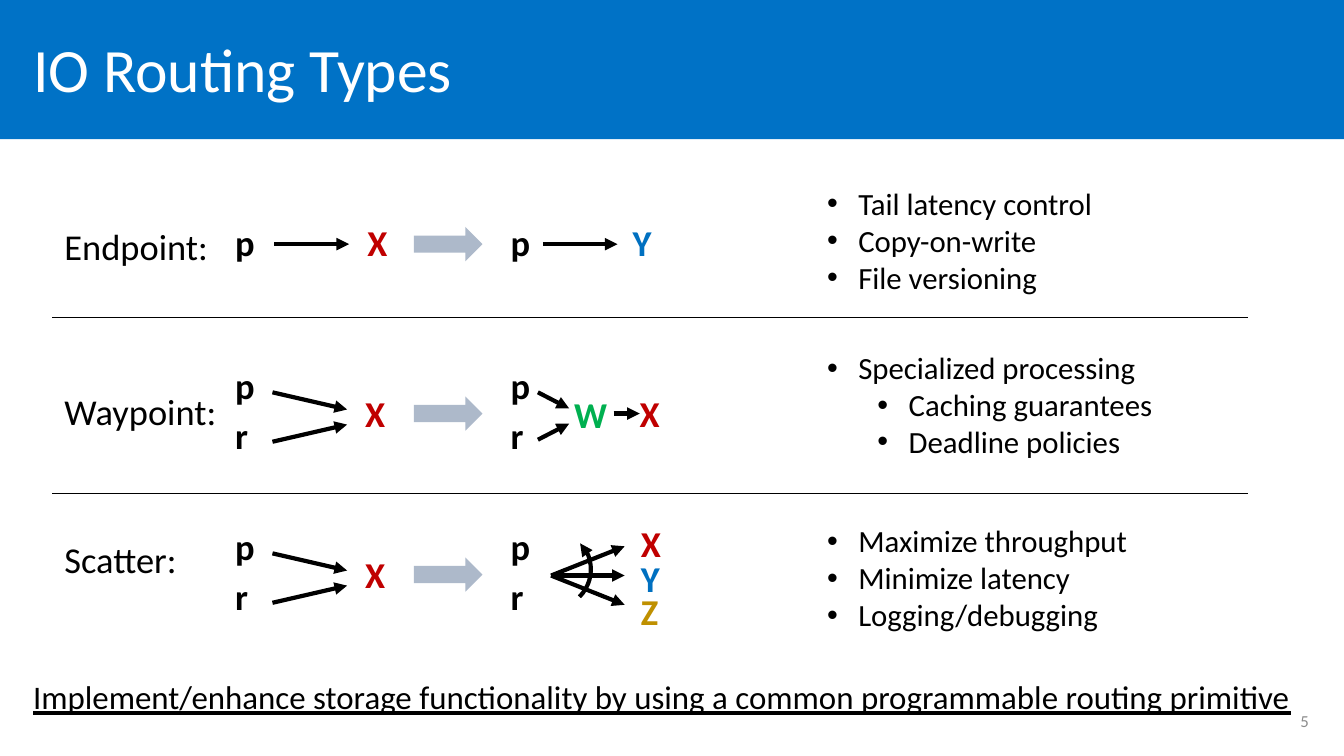
from lxml import etree
from pptx import Presentation
from pptx.dml.color import RGBColor
from pptx.enum.shapes import MSO_CONNECTOR, MSO_SHAPE
from pptx.enum.text import MSO_ANCHOR, PP_ALIGN
from pptx.oxml.ns import qn
from pptx.util import Inches, Pt

RECT, BLOCK, ARC = MSO_SHAPE.RECTANGLE, MSO_SHAPE.RIGHT_ARROW, MSO_SHAPE.ARC
STRAIGHT = MSO_CONNECTOR.STRAIGHT
TOP, MIDDLE = MSO_ANCHOR.TOP, MSO_ANCHOR.MIDDLE
LEFT, RIGHT = PP_ALIGN.LEFT, PP_ALIGN.RIGHT

W, H = 13.33, 7.5
FONT = "Calibri"
BLACK, WHITE, GREY = "000000", "FFFFFF", "8C8C8C"
BAND, STEEL = "0072C6", "ADB9CA"
# Letter: colour and box width
GLYPHS = {"p": (BLACK, 0.2), "r": (BLACK, 0.13), "X": ("C00000", 0.2),
          "Y": ("0070C0", 0.2), "W": ("00B050", 0.33), "Z": ("BF9000", 0.17)}
TALL = 0.44

# Columns and row centres as shares of the slide
LABEL, BEFORE, SWAP, AFTER, NOTES = [
    W * part for part in (0.048, 0.175, 0.308, 0.38, 0.608)]
MIDS = [H * part for part in (0.323, 0.547, 0.76)]


def paint(color):
    return RGBColor.from_string(color)


# Basic parts
def text(slide, box, words, size, color=BLACK, bold=False, inset=0.0,
         anchor=TOP, align=LEFT, wrap=False):
    shape = slide.shapes.add_textbox(*map(Inches, box))
    frame = shape.text_frame
    frame.word_wrap, frame.vertical_anchor = wrap, anchor
    frame.margin_left = frame.margin_right = Inches(inset)
    frame.margin_top = frame.margin_bottom = Inches(inset / 2)
    frame.text = words
    for para in frame.paragraphs:
        para.alignment = align
        font = para.font
        font.name, font.size, font.bold = FONT, Pt(size), bold
        font.color.rgb = paint(color)
    return shape


def block(slide, kind, box, fill):
    shape = slide.shapes.add_shape(kind, *map(Inches, box))
    shape.shadow.inherit = False
    shape.fill.solid()
    shape.fill.fore_color.rgb = paint(fill)
    shape.line.fill.background()


def stroke(shape, width, tip=None):
    shape.line.color.rgb = paint(BLACK)
    shape.line.width = Pt(width)
    if tip:
        etree.SubElement(shape.line._get_or_add_ln(), qn("a:" + tip),
                         type="triangle")


def line(slide, x1, y1, x2, y2, width=3, tip="tailEnd"):
    wire = slide.shapes.add_connector(
        STRAIGHT, *map(Inches, (x1, y1, x2, y2)))
    stroke(wire, width, tip)
    etree.SubElement(wire._element.spPr, qn("a:effectLst"))
    return wire


def glyph(slide, letter, x, mid):
    color, wide = GLYPHS[letter]
    return text(slide, (x, mid - TALL / 2, wide, TALL), letter, 26, color,
                bold=True)


# Diagrams, each placed from its left edge and row centre
def direct(slide, x, mid, gap, goal, reach):
    glyph(slide, "p", x, mid - 0.02)
    glyph(slide, goal, x + reach, mid - 0.02)
    line(slide, x + gap, mid, x + gap + 0.74, mid)


def pair(slide, x, mid):
    glyph(slide, "p", x, mid - 0.28)
    glyph(slide, "r", x, mid + 0.22)


def merge(slide, x, mid):
    pair(slide, x, mid)
    glyph(slide, "X", x + 1.29, mid)
    for start, end in ((-0.21, -0.04), (0.28, 0.11)):
        line(slide, x + 0.37, mid + start, x + 1.11, mid + end)


def detour(slide, x, mid):
    pair(slide, x, mid)
    glyph(slide, "W", x + 0.63, mid + 0.01)
    goal = glyph(slide, "X", x + 1.28, mid)
    for start, end in ((-0.21, -0.05), (0.26, 0.1)):
        line(slide, x + 0.27, mid + start, x + 0.58, mid + end)
    line(slide, x + 1.02, mid, x + 1.28, mid).end_connect(goal, 1)


def fan(slide, x, mid):
    pair(slide, x, mid)
    for letter, drop in (("X", -0.31), ("Y", 0.04), ("Z", 0.36)):
        glyph(slide, letter, x + 1.29, mid + drop)
    for drop in (-0.29, 0, 0.29):
        line(slide, x + 0.4, mid + 0.01, x + 1.13, mid + 0.01 + drop)
    sweep = slide.shapes.add_shape(
        ARC, *map(Inches, (x + 0.05, mid - 0.42, 0.74, 0.76)))
    sweep.rotation = 45
    sweep.shadow.inherit = False
    sweep.fill.background()
    stroke(sweep, 3, "headEnd")


# Bulleted notes: (level, words) pairs
def notes(slide, x, y, items):
    shape = text(slide, (x, y, 4, 1.21),
                 "\n".join(words for _, words in items), 22, inset=0.1,
                 wrap=True)
    for para, (level, _) in zip(shape.text_frame.paragraphs, items):
        para.level = level
        props = para._p.get_or_add_pPr()
        props.set("marL", str(Inches(0.31 + 0.5 * level)))
        props.set("indent", str(Inches(-0.31)))
        spot = list(props).index(props.find(qn("a:defRPr")))
        props.insert(spot, etree.Element(qn("a:buChar"), char="•"))
        props.insert(spot, etree.Element(qn("a:buFont"), typeface="Arial"))


def row(slide, mid, name, rise, items, lift):
    text(slide, (LABEL, mid - rise, 1.6, 0.52), name, 26)
    block(slide, BLOCK, (SWAP, mid - 0.17, 0.68, 0.34), STEEL)
    notes(slide, NOTES, mid - lift, items)


def header(slide, high):
    block(slide, RECT, (0, 0, W, high), BAND)
    title = text(slide, (0.23, 0.13, 12.85, high - 0.2), "IO Routing Types",
                 44, WHITE, inset=0.1, anchor=MIDDLE, wrap=True)
    title.text_frame.paragraphs[0].line_spacing = 0.9


def footer(slide, y):
    claim = text(slide, (0.23, y, 12.79, 0.58),
                 "Implement/enhance storage functionality by using a common "
                 "programmable routing primitive", 23.5, inset=0.1, wrap=True)
    para = claim.text_frame.paragraphs[0]
    para.line_spacing, para.font.underline = 0.9, True
    text(slide, (10.08, y + 0.24, 3, 0.4), "5", 12, GREY, inset=0.1,
         anchor=MIDDLE, align=RIGHT, wrap=True)


def main():
    deck = Presentation()
    deck.slide_width, deck.slide_height = Inches(W), Inches(H)
    slide = deck.slides.add_slide(deck.slide_layouts[6])
    header(slide, 1.38)
    footer(slide, 6.71)
    for y in (3.15, 4.89):
        line(slide, 0.52, y, 12.38, y, 0.5, None)

    # Rows
    first, second, third = MIDS
    row(slide, first, "Endpoint:", 0.2,
        [(0, "Tail latency control"), (0, "Copy-on-write"),
         (0, "File versioning")], 0.64)
    direct(slide, BEFORE, first, 0.39, "X", 1.31)
    direct(slide, AFTER, first, 0.32, "Y", 1.21)

    row(slide, second, "Waypoint:", 0.24,
        [(0, "Specialized processing"), (1, "Caching guarantees"),
         (1, "Deadline policies")], 0.69)
    merge(slide, BEFORE, second)
    detour(slide, AFTER, second)

    row(slide, third, "Scatter:", 0.37,
        [(0, "Maximize throughput"), (0, "Minimize latency"),
         (0, "Logging/debugging")], 0.57)
    merge(slide, BEFORE, third)
    fan(slide, AFTER, third)
    deck.save("out.pptx")


if __name__ == "__main__":
    main()
